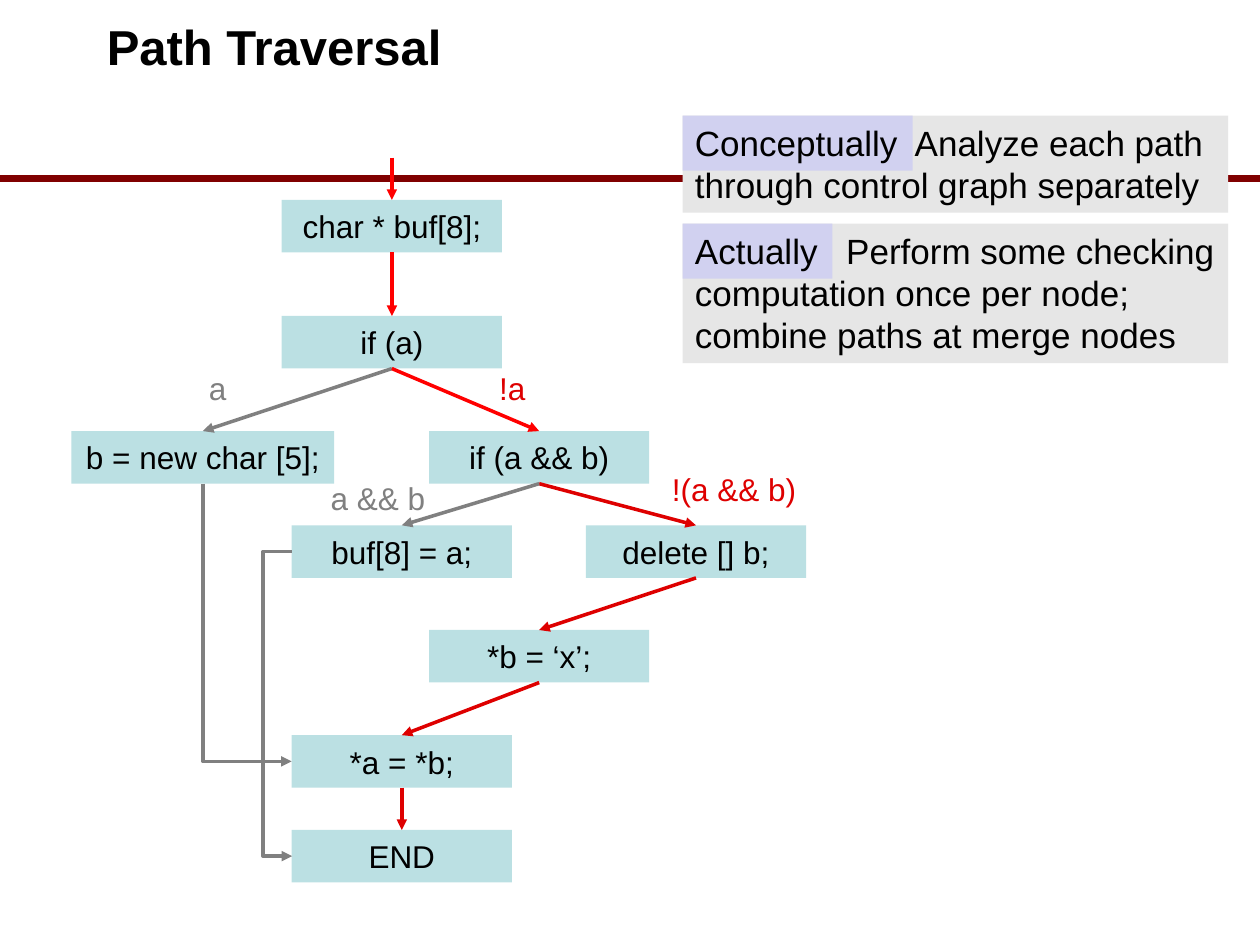
from lxml import etree
from pptx import Presentation
from pptx.dml.color import RGBColor
from pptx.enum import shapes, text
from pptx.oxml import ns
from pptx.util import Cm, Pt

COLORS = {
    "rule": "800000", "node": "BBE0E3", "note": "E6E6E6", "tag": "D1D1F0",
    "black": "000000", "gray": "808080", "red": "FF0000", "dark_red": "DE0000",
}
NODE_W, NODE_H = 4.44, 1.06
NODES = {
    "buf": ("char * buf[8];", 6.46, 0.85, NODE_W),
    "if_a": ("if (a)", 6.46, 3.19, NODE_W),
    "new": ("b = new char [5];", 2.65, 5.51, 5.3),
    "if_ab": ("if (a && b)", 9.43, 5.51, NODE_W),
    "store": ("buf[8] = a;", 6.66, 7.41, NODE_W),
    "delete": ("delete [] b;", 12.59, 7.41, NODE_W),
    "write": ("*b = ‘x’;", 9.43, 9.52, NODE_W),
    "copy": ("*a = *b;", 6.66, 11.64, NODE_W),
    "end": ("END", 6.66, 13.55, NODE_W),
}
EDGES = [
    ("buf", "if_a", "red"), ("if_a", "new", "gray"), ("if_a", "if_ab", "red"),
    ("if_ab", "delete", "dark_red"), ("if_ab", "store", "gray"),
    ("write", "copy", "dark_red"), ("copy", "end", "dark_red"),
    ("delete", "write", "dark_red"),
]
LABELS = [
    ("a", 2.95, 4.14, "gray"), ("!a", 8.89, 4.14, "dark_red"),
    ("a && b", 6.18, 6.35, "gray"), ("!(a && b)", 13.36, 6.17, "dark_red"),
]


def rgb(name):
    return RGBColor.from_string(COLORS[name])


def add_run(p, words, size, color="black", bold=False):
    r = p.add_run()
    r.text = words
    r.font.name = "Arial"
    r.font.size = Pt(size)
    r.font.bold = bold
    r.font.color.rgb = rgb(color)


def add_box(s, x, y, w, h, fill):
    sp = s.shapes.add_shape(shapes.MSO_SHAPE.RECTANGLE, Cm(x), Cm(y), Cm(w), Cm(h))
    sp.shadow.inherit = False
    sp.fill.solid()
    sp.fill.fore_color.rgb = rgb(fill)
    sp.line.fill.background()
    return sp


def add_line(s, x1, y1, x2, y2, color, width=2, arrow=True,
             kind=shapes.MSO_CONNECTOR.STRAIGHT):
    line = s.shapes.add_connector(kind, Cm(x1), Cm(y1), Cm(x2), Cm(y2))
    line.line.color.rgb = rgb(color)
    line.line.width = Pt(width)
    if arrow:
        etree.SubElement(line.line._get_or_add_ln(), ns.qn("a:tailEnd"), type="triangle")
    etree.SubElement(line._element.spPr, ns.qn("a:effectLst"))
    return line


def add_corner(s, x1, y1, x2, y2, color):
    cx, cy = (x1 + x2) / 2, (y1 + y2) / 2
    w, h = y2 - y1, x2 - x1
    line = add_line(s, cx - w / 2, cy - h / 2, cx + w / 2, cy + h / 2, color,
                    kind=shapes.MSO_CONNECTOR.ELBOW)
    xfrm = line._element.spPr.find(ns.qn("a:xfrm"))
    xfrm.set("rot", "16200000")
    xfrm.set("flipH", "1")
    line._element.spPr.find(ns.qn("a:prstGeom")).set("prst", "bentConnector2")


def add_bracket(s, x, y1, y2, reach, color):
    thin = 0.01
    line = add_line(s, x, y1, x + thin, y2, color, kind=shapes.MSO_CONNECTOR.ELBOW)
    guides = line._element.spPr.find(ns.qn("a:prstGeom")).find(ns.qn("a:avLst"))
    etree.SubElement(guides, ns.qn("a:gd"), name="adj1",
                     fmla=f"val {round(-reach / thin * 100000)}")


def add_title(s, x, y, w, h):
    title = s.shapes.title
    title.left, title.top, title.width, title.height = Cm(x), Cm(y), Cm(w), Cm(h)
    tf = title.text_frame
    tf.vertical_anchor = text.MSO_ANCHOR.TOP
    p = tf.paragraphs[0]
    p.alignment = text.PP_ALIGN.LEFT
    add_run(p, "Path Traversal", 28, bold=True)


def add_flowchart(s, x, y):
    for words, cx, top, w in NODES.values():
        sp = add_box(s, x + cx - w / 2, y + top, w, NODE_H, "node")
        tf = sp.text_frame
        tf.word_wrap = False
        tf.vertical_anchor = text.MSO_ANCHOR.MIDDLE
        p = tf.paragraphs[0]
        p.alignment = text.PP_ALIGN.CENTER
        add_run(p, words, 18)

    _, cx, top, _ = NODES["buf"]
    add_line(s, x + cx, y, x + cx, y + top, "red")
    for start, end, color in EDGES:
        _, x1, y1, _ = NODES[start]
        _, x2, y2, _ = NODES[end]
        add_line(s, x + x1, y + y1 + NODE_H, x + x2, y + y2, color)

    left = x + NODES["copy"][1] - NODE_W / 2
    middle = {key: y + node[2] + NODE_H / 2 for key, node in NODES.items()}
    add_corner(s, x + NODES["new"][1], middle["new"] + NODE_H / 2,
               left, middle["copy"], "gray")
    add_bracket(s, left, middle["store"], middle["end"], 0.58, "gray")

    label_w = 3.02
    for words, cx, top, color in LABELS:
        sp = s.shapes.add_textbox(Cm(x + cx - label_w / 2), Cm(y + top), Cm(label_w), Cm(1.02))
        sp.text_frame.word_wrap = True
        p = sp.text_frame.paragraphs[0]
        p.alignment = text.PP_ALIGN.CENTER
        add_run(p, words, 18, color)


def add_note(s, x, y, w, h, tag, tag_w, words, indent):
    for fill, width, height, content in (("note", w, h, words), ("tag", tag_w, 1.11, tag)):
        sp = add_box(s, x, y, width, height, fill)
        tf = sp.text_frame
        tf.word_wrap = fill == "note"
        tf.margin_right = Cm(0.1)
        tf.vertical_anchor = text.MSO_ANCHOR.TOP
        p = tf.paragraphs[0]
        p.alignment = text.PP_ALIGN.LEFT
        if fill == "note":
            p._p.get_or_add_pPr().set("indent", str(Cm(indent)))
        add_run(p, content, 20)


def main():
    prs = Presentation()
    prs.slide_width, prs.slide_height = Cm(25.4), Cm(19.05)
    s = prs.slides.add_slide(prs.slide_layouts[5])
    add_line(s, 0, 3.6, 25.4, 3.6, "rule", width=4, arrow=False)
    add_flowchart(s, 1.44, 3.18)
    add_title(s, 1.9, 0.2, 21.6, 3.18)
    add_note(s, 13.76, 2.33, 11, 1.96, "Conceptually", 4.64,
             "Analyze each path through control graph separately", 4.43)
    add_note(s, 13.76, 4.51, 11, 2.81, "Actually", 3.02,
             "Perform some checking computation once per node; "
             "combine paths at merge nodes", 3.05)
    prs.save("out.pptx")


if __name__ == "__main__":
    main()
